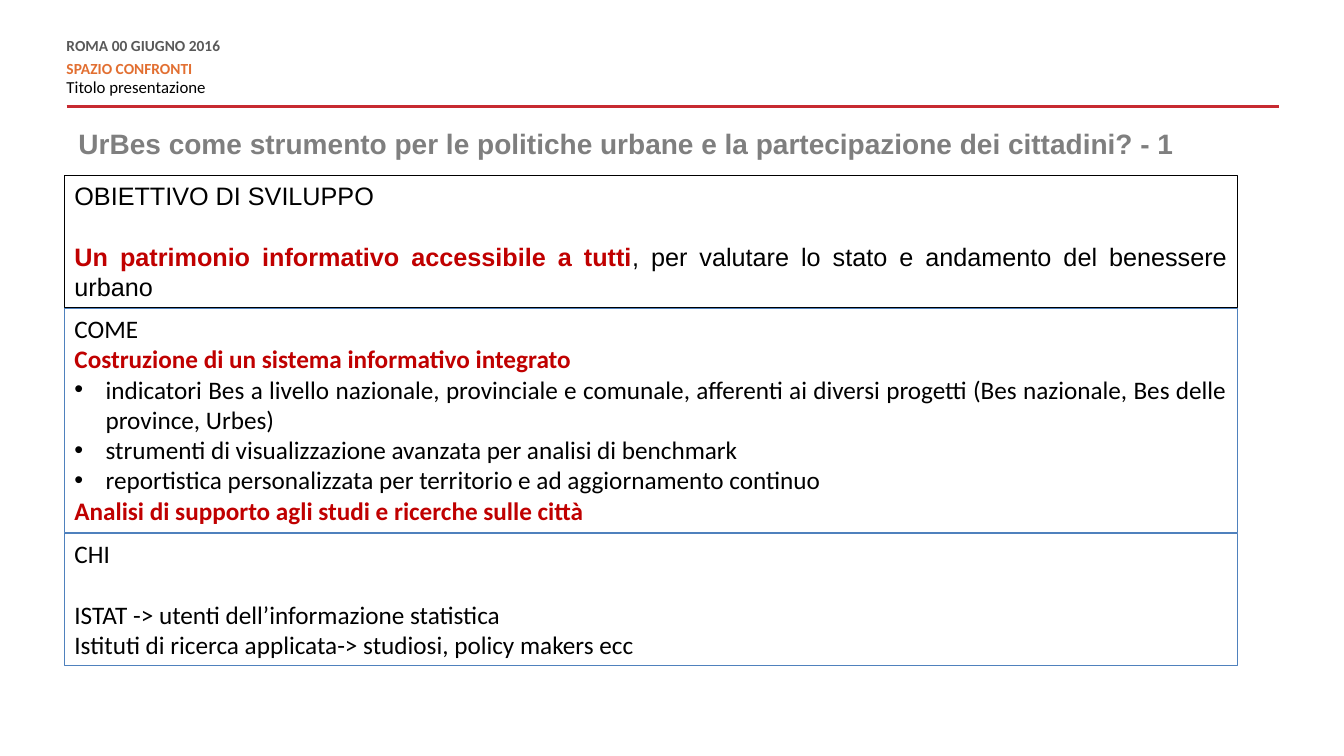
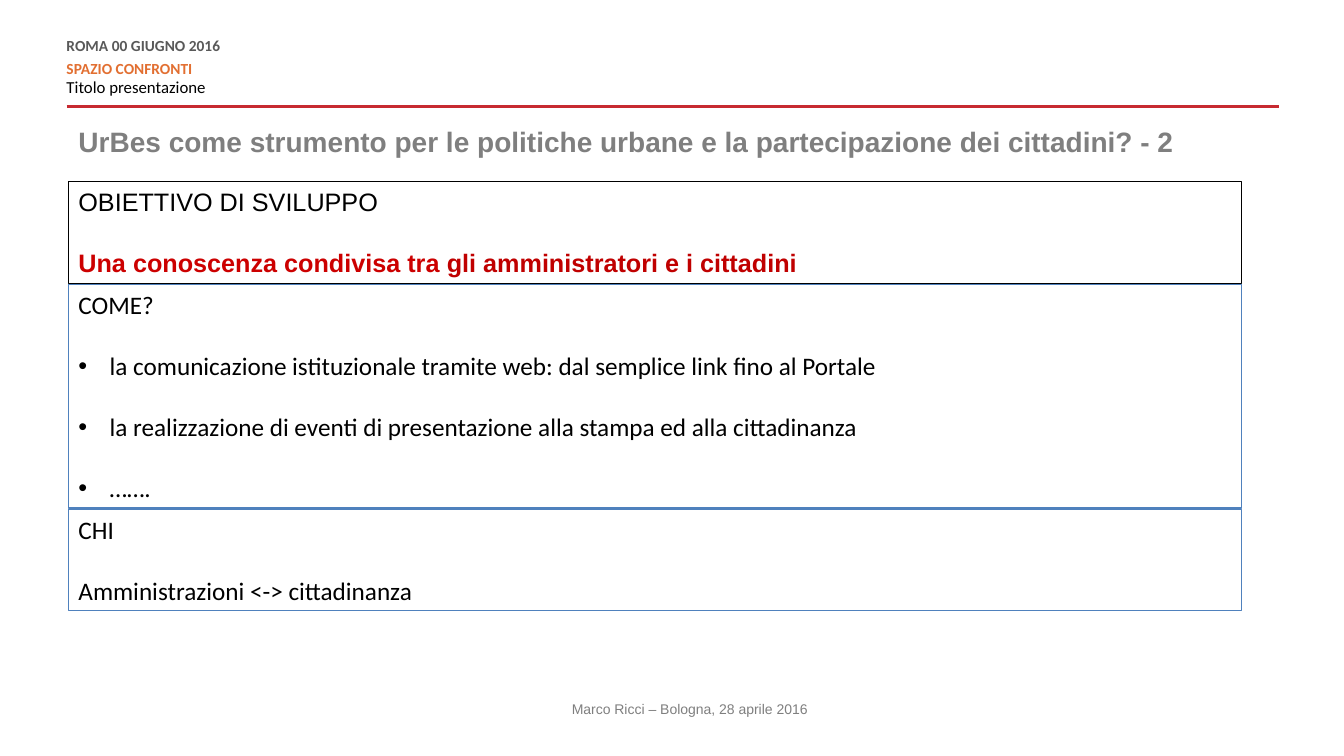
"""Build two slides on UrBes as a tool for urban policies."""
from dataclasses import dataclass

from lxml.etree import SubElement
from pptx import Presentation
from pptx.dml.color import RGBColor
from pptx.enum.shapes import MSO_CONNECTOR as Connector, MSO_SHAPE as Shape
from pptx.enum.text import MSO_ANCHOR as Anchor, MSO_AUTO_SIZE as AutoSize, PP_ALIGN as Align
from pptx.oxml.ns import qn
from pptx.util import Inches, Pt

BLACK = RGBColor(0x00, 0x00, 0x00)
GRAY = RGBColor(0x7F, 0x7F, 0x7F)
DARK_GRAY = RGBColor(0x59, 0x59, 0x59)
ORANGE = RGBColor(0xE2, 0x6F, 0x31)
RULE_RED = RGBColor(0xC7, 0x2A, 0x31)
DARK_RED = RGBColor(0xC0, 0x00, 0x00)
BRIGHT_RED = RGBColor(0xCC, 0x00, 0x00)
BLUE = RGBColor(0x4F, 0x81, 0xBD)

BLANK_LINE = 22
BOX_WIDTH = 11.63
BOX_GAP = 0.01
BULLET_INDENT = 0.31


@dataclass
class Line:
    """One paragraph, with an optional differently styled tail (text, colour, bold)."""
    text: str
    color: RGBColor = BLACK
    bold: bool = False
    size: float = 18
    font: str = "Calibri"
    align: Align = Align.LEFT
    before: float = 0
    after: float = 0
    spacing: float = 0
    bullet: bool = False
    tail: tuple = ()


def style(font, color, bold):
    """Set the colour and weight of a font."""
    font.color.rgb = color
    font.bold = bold


def add_bullet(paragraph):
    """Give a paragraph a hanging round bullet."""
    properties = paragraph._p.get_or_add_pPr()
    properties.set("marL", str(Inches(BULLET_INDENT)))
    properties.set("indent", str(-Inches(BULLET_INDENT)))
    SubElement(properties, qn("a:buFont"), typeface="Arial")
    SubElement(properties, qn("a:buChar"), char="•")


def write_lines(frame, lines):
    """Fill a text frame with lines."""
    frame.word_wrap = True
    for index, line in enumerate(lines):
        paragraph = frame.add_paragraph() if index else frame.paragraphs[0]
        paragraph.alignment = line.align
        if line.spacing:
            paragraph.line_spacing = Pt(line.spacing)
        paragraph.space_before = Pt(line.before)
        paragraph.space_after = Pt(line.after)
        if line.bullet:
            add_bullet(paragraph)
        paragraph.font.name = line.font
        paragraph.font.size = Pt(line.size)
        run = paragraph.add_run()
        run.text = line.text
        if line.tail:
            text, color, bold = line.tail
            style(run.font, line.color, line.bold)
            tail = paragraph.add_run()
            tail.text = text
            style(tail.font, color, bold)
        else:
            style(paragraph.font, line.color, line.bold)


def add_text(slide, left, top, width, height, lines):
    """Add a text box and return its frame."""
    box = slide.shapes.add_textbox(Inches(left), Inches(top), Inches(width), Inches(height))
    write_lines(box.text_frame, lines)
    return box.text_frame


def add_header(slide):
    """Add the event header and the red rule."""
    rule = slide.shapes.add_connector(
        Connector.STRAIGHT, Inches(0.66), Inches(1.06), Inches(12.69), Inches(1.06))
    rule.line.color.rgb = RULE_RED
    rule.line.width = Pt(2)
    SubElement(rule._element.spPr, qn("a:effectLst"))
    frame = add_text(slide, 0.66, 0.39, 8.34, 0.59, [
        Line("ROMA 00 GIUGNO 2016", DARK_GRAY, True, 11, after=6, spacing=10.8),
        Line("SPAZIO CONFRONTI", ORANGE, True, 11, spacing=10.8),
        Line("Titolo presentazione", size=12, before=3, after=6, spacing=10.8),
    ])
    frame.margin_left = frame.margin_top = frame.margin_right = frame.margin_bottom = 0


def add_title(slide, top, number):
    """Add the numbered slide title."""
    text = f"UrBes come strumento per le politiche urbane e la partecipazione dei cittadini? - {number}"
    frame = add_text(slide, 0.68, top, 12, 0.22, [Line(text, GRAY, True, 20, "Arial")])
    frame.vertical_anchor = Anchor.MIDDLE


def add_box(slide, left, top, height, border, lines):
    """Add an outlined box of text."""
    box = slide.shapes.add_shape(
        Shape.RECTANGLE, Inches(left), Inches(top), Inches(BOX_WIDTH), Inches(height))
    box.shadow.inherit = False
    box.fill.background()
    box.line.color.rgb = border
    box.line.width = Pt(0.75)
    write_lines(box.text_frame, lines)
    box.text_frame.vertical_anchor = Anchor.TOP
    box.text_frame.auto_size = AutoSize.SHAPE_TO_FIT_TEXT


def add_stack(slide, left, top, boxes):
    """Stack boxes given as (height, border, lines)."""
    for height, border, lines in boxes:
        add_box(slide, left, top, height, border, lines)
        top += height + BOX_GAP


def goal(text, color, tail):
    """Return the lines of a development goal."""
    return [
        Line("OBIETTIVO DI SVILUPPO", font="Arial", align=Align.JUSTIFY),
        Line(text, color, True, font="Arial", align=Align.JUSTIFY, before=BLANK_LINE, tail=tail),
    ]


def bullets(texts, before=0):
    """Return justified bullet lines."""
    return [Line(text, align=Align.JUSTIFY, before=before, bullet=True) for text in texts]


def add_slide(presentation, number, title_top, left, top, boxes):
    """Add a slide with header, title and stacked boxes."""
    slide = presentation.slides.add_slide(presentation.slide_layouts[6])
    add_header(slide)
    add_title(slide, title_top, number)
    add_stack(slide, left, top, boxes)
    return slide


def main():
    """Build and save the presentation."""
    presentation = Presentation()
    presentation.slide_width = Inches(13.33)
    presentation.slide_height = Inches(7.5)

    add_slide(presentation, 1, 1.31, 0.64, 1.74, [
        (1.31, BLACK, goal(
            "Un patrimonio informativo accessibile a tutti", DARK_RED,
            (", per valutare lo stato e andamento del benessere urbano", BLACK, False))),
        (2.22, BLUE, [
            Line("COME"),
            Line("Costruzione di un sistema informativo integrato", DARK_RED, True),
            *bullets([
                "indicatori Bes a livello nazionale, provinciale e comunale, afferenti ai "
                "diversi progetti (Bes nazionale, Bes delle province, Urbes)",
                "strumenti di visualizzazione avanzata per analisi di benchmark",
                "reportistica personalizzata per territorio e ad aggiornamento continuo",
            ]),
            Line("Analisi di supporto agli studi e ricerche sulle città", DARK_RED, True),
        ]),
        (1.31, BLUE, [
            Line("CHI"),
            Line("ISTAT -> utenti dell’informazione statistica", before=BLANK_LINE),
            Line("Istituti di ricerca applicata-> studiosi, policy makers ecc"),
        ]),
    ])

    slide = add_slide(presentation, 2, 1.29, 0.68, 1.8, [
        (1.01, BLACK, goal(
            "Una conoscenza condivisa tra ", BRIGHT_RED,
            ("gli amministratori e i cittadini", DARK_RED, True))),
        (2.22, BLUE, [
            Line("COME?"),
            *bullets([
                "la comunicazione istituzionale tramite web: dal semplice link fino al Portale",
                "la realizzazione di eventi di presentazione alla stampa ed alla cittadinanza",
                "…….",
            ], BLANK_LINE),
        ]),
        (1.01, BLUE, [
            Line("CHI"),
            Line("Amministrazioni <-> cittadinanza", before=BLANK_LINE),
        ]),
    ])
    add_text(slide, 3.87, 6.9, 5.94, 0.27, [
        Line("Marco Ricci – Bologna, 28 aprile 2016", GRAY, size=10, font="Arial",
             align=Align.CENTER)])

    presentation.save("out.pptx")


if __name__ == "__main__":
    main()
